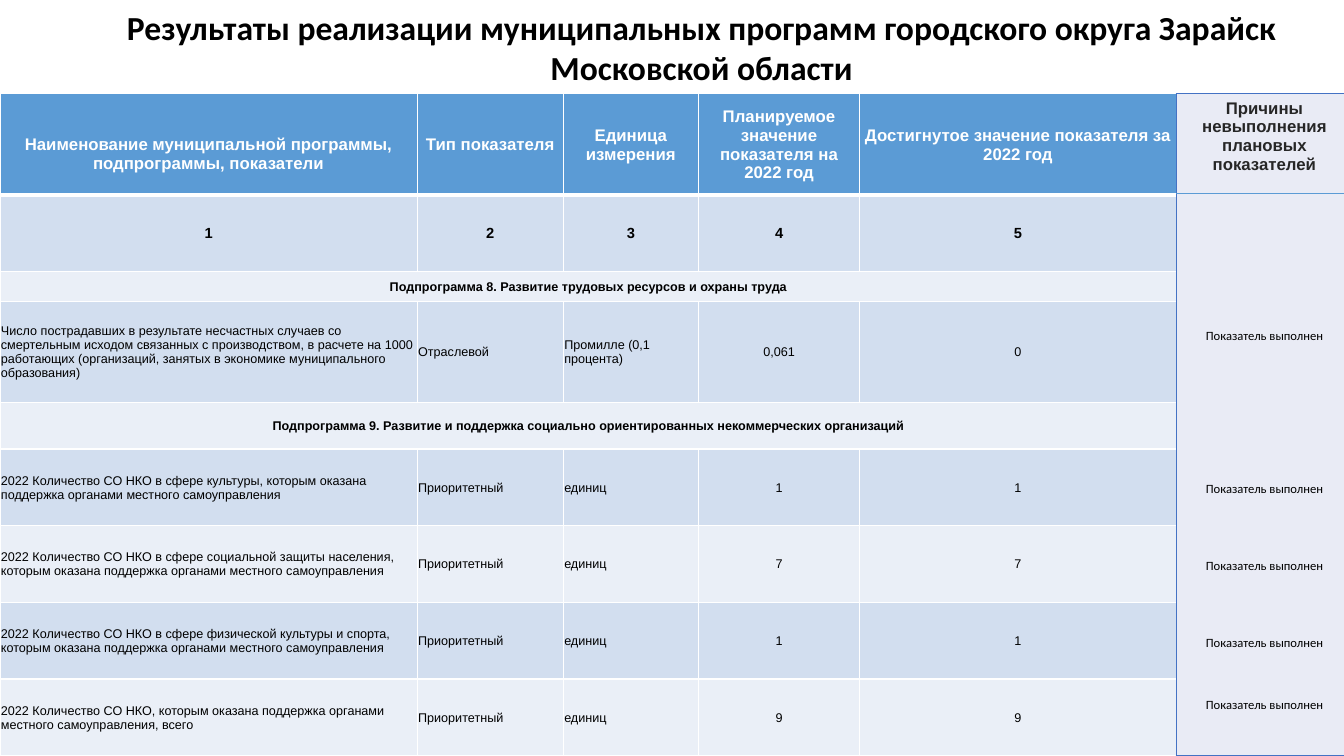
from dataclasses import dataclass

from lxml import etree
from pptx import Presentation
from pptx.dml.color import RGBColor
from pptx.enum.shapes import MSO_CONNECTOR
from pptx.enum.text import MSO_ANCHOR, MSO_AUTO_SIZE, PP_ALIGN
from pptx.oxml.ns import qn
from pptx.util import Pt

CENTER, LEFT = PP_ALIGN.CENTER, PP_ALIGN.LEFT
MIDDLE, TOP = MSO_ANCHOR.MIDDLE, MSO_ANCHOR.TOP
STRAIGHT = MSO_CONNECTOR.STRAIGHT
FIT_SHAPE = MSO_AUTO_SIZE.SHAPE_TO_FIT_TEXT

WHITE, BLACK, DARK_GREY = "FFFFFF", "000000", "262626"
BLUE, BAND, LIGHT_BAND = "5B9BD5", "D2DEEF", "EAEFF7"
REASONS_FILL, REASONS_BORDER = "E9EBF5", "4472C4"

TABLE_TOP = 67
COLUMN_WIDTHS = [298, 104.4, 96.5, 115.2, 226.1]
REASONS_LEFT = sum(COLUMN_WIDTHS)
REASONS_WIDTH = 126
HEADER_HEIGHT = 72.2
INDICATOR_HEIGHT = 54.8
REASON_LINE = 11


@dataclass
class TextFormat:
    size: float
    bold: bool = False
    color: str = BLACK
    font: str = "Arial"


@dataclass
class Row:
    height: float
    texts: list[str]
    fill: str
    text_format: TextFormat
    centered_from: int = 0
    bottom_border: float = 1


@dataclass
class Reason:
    text: str
    blank_lines: int


HEADER = TextFormat(12, True, WHITE)
NUMBERS = TextFormat(10.5, True)
SUBPROGRAM = TextFormat(9, True)
INDICATOR = TextFormat(9)
REASON_TITLE = TextFormat(12, True, DARK_GREY)
REASON = TextFormat(9, font="Calibri")
TITLE = TextFormat(24, True, font="Calibri")


def indicator(name: str, value: str, fill: str) -> Row:
    """Row of a priority indicator whose planned and reached values agree."""
    texts = [name, "Приоритетный", "единиц", value, value]
    return Row(INDICATOR_HEIGHT, texts, fill, INDICATOR, 3)


ROWS = [
    Row(HEADER_HEIGHT,
        ["Наименование муниципальной программы, подпрограммы, показатели", "Тип показателя",
         "Единица измерения", "Планируемое значение показателя на 2022 год",
         "Достигнутое значение показателя за 2022 год"], BLUE, HEADER, bottom_border=3),
    Row(55, ["1", "2", "3", "4", "5"], BAND, NUMBERS),
    Row(21, ["Подпрограмма 8. Развитие трудовых ресурсов и охраны труда"], LIGHT_BAND, SUBPROGRAM),
    Row(72.3,
        ["Число пострадавших в результате несчастных случаев со смертельным исходом связанных "
         "с производством, в расчете на 1000 работающих (организаций, занятых в экономике "
         "муниципального образования)", "Отраслевой", "Промилле (0,1 процента)", "0,061", "0"],
        BAND, INDICATOR, 3),
    Row(33.2, ["Подпрограмма 9. Развитие и поддержка социально ориентированных "
               "некоммерческих организаций"], LIGHT_BAND, SUBPROGRAM),
    indicator("2022 Количество СО НКО в сфере культуры, которым оказана поддержка "
              "органами местного самоуправления", "1", BAND),
    indicator("2022 Количество СО НКО в сфере социальной защиты населения, которым оказана "
              "поддержка органами местного самоуправления", "7", LIGHT_BAND),
    indicator("2022 Количество СО НКО в сфере физической культуры и спорта, которым оказана "
              "поддержка органами местного самоуправления", "1", BAND),
    indicator("2022 Количество СО НКО, которым оказана поддержка органами местного "
              "самоуправления, всего", "9", LIGHT_BAND),
]
TABLE_HEIGHT = sum(row.height for row in ROWS)
REASONS = [Reason("Показатель выполнен", lines) for lines in (10, 9, 4, 4, 3)]


def rgb(value: str) -> RGBColor:
    return RGBColor.from_string(value)


def write(paragraph, text: str, text_format: TextFormat, align=CENTER) -> None:
    paragraph.alignment = align
    run = paragraph.add_run()
    run.text = text
    values = {"name": text_format.font, "size": Pt(text_format.size), "bold": text_format.bold}
    for attribute, value in values.items():
        setattr(run.font, attribute, value)
    run.font.color.rgb = rgb(text_format.color)


def style_cell(cell, fill: str, border: str, widths: dict[str, float], anchor, margins) -> None:
    properties = cell._tc.get_or_add_tcPr()
    for side in ("lnL", "lnR", "lnT", "lnB"):
        line = etree.SubElement(properties, qn(f"a:{side}"), w=str(Pt(widths.get(side, 1))))
        solid = etree.SubElement(line, qn("a:solidFill"))
        etree.SubElement(solid, qn("a:srgbClr"), val=border)
    cell.fill.solid()
    cell.fill.fore_color.rgb = rgb(fill)
    cell.vertical_anchor = anchor
    for side, margin in zip(("left", "top", "right", "bottom"), margins):
        setattr(cell, f"margin_{side}", Pt(margin))


def add_plain_table(slide, left: float, widths: list[float], heights: list[float]):
    frame = slide.shapes.add_table(len(heights), len(widths), Pt(left), Pt(TABLE_TOP),
                                   Pt(sum(widths)), Pt(sum(heights)))
    table = frame.table
    table.first_row = table.horz_banding = False
    for column, width in zip(table.columns, widths):
        column.width = Pt(width)
    for row, height in zip(table.rows, heights):
        row.height = Pt(height)
    return table


def add_title(slide, text: str) -> None:
    box = slide.shapes.add_textbox(Pt(72), Pt(1.4), Pt(858.2), Pt(65.5))
    box.text_frame.word_wrap = True
    box.text_frame.auto_size = FIT_SHAPE
    write(box.text_frame.paragraphs[0], text, TITLE)


def add_results(slide) -> None:
    table = add_plain_table(slide, 0, COLUMN_WIDTHS, [row.height for row in ROWS])
    last = len(COLUMN_WIDTHS) - 1
    for r, row in enumerate(ROWS):
        for c in range(last + 1):
            top_margin = 14.5 if r == c == 0 else 0.7
            style_cell(table.cell(r, c), row.fill, WHITE, {"lnB": row.bottom_border},
                       MIDDLE, (0.7, top_margin, 0.7, 0))
        if len(row.texts) == 1:
            table.cell(r, 0).merge(table.cell(r, last))
        for c, text in enumerate(row.texts):
            align = CENTER if c >= row.centered_from else LEFT
            write(table.cell(r, c).text_frame.paragraphs[0], text, row.text_format, align)


def add_reasons(slide) -> None:
    cell = add_plain_table(slide, REASONS_LEFT, [REASONS_WIDTH], [TABLE_HEIGHT]).cell(0, 0)
    style_cell(cell, REASONS_FILL, REASONS_BORDER, {}, TOP, (7.2, 3.6, 7.2, 3.6))
    write(cell.text_frame.paragraphs[0], "Причины невыполнения плановых показателей", REASON_TITLE)
    for reason in REASONS:
        paragraph = cell.text_frame.add_paragraph()
        paragraph.space_before = Pt(reason.blank_lines * REASON_LINE)
        write(paragraph, reason.text, REASON)


def add_header_rule(slide) -> None:
    y = Pt(TABLE_TOP + HEADER_HEIGHT - 1)
    rule = slide.shapes.add_connector(STRAIGHT, Pt(REASONS_LEFT), y,
                                      Pt(REASONS_LEFT + REASONS_WIDTH), y)
    rule.line.color.rgb = rgb(BLUE)
    rule.line.width = Pt(0.5)
    etree.SubElement(rule._element.spPr, qn("a:effectLst"))


def main() -> None:
    presentation = Presentation()
    presentation.slide_width, presentation.slide_height = Pt(960), Pt(540)
    slide = presentation.slides.add_slide(presentation.slide_layouts[6])
    add_title(slide, "Результаты реализации муниципальных программ городского округа "
                     "Зарайск Московской области")
    add_results(slide)
    add_reasons(slide)
    add_header_rule(slide)
    presentation.save("out.pptx")


if __name__ == "__main__":
    main()
